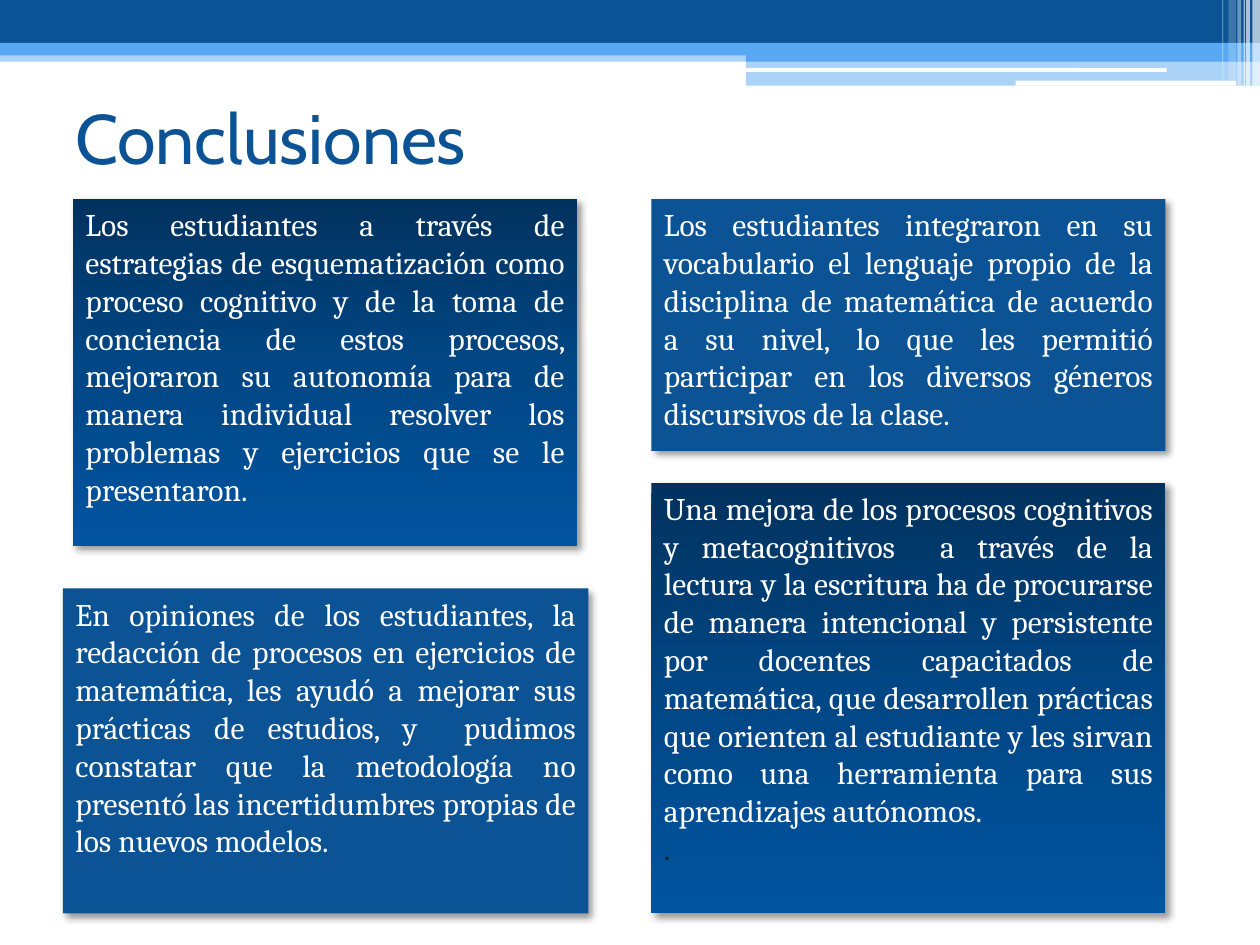
from copy import deepcopy

from lxml import etree
from pptx import Presentation
from pptx.dml.color import RGBColor
from pptx.enum import shapes, text
from pptx.oxml import ns
from pptx.util import Inches, Pt

HUES = {
    "navy": "0B5394", "sky": "59A9F2", "white": "FFFFFF", "black": "000000",
    "ink": "072428", "top": "01325E", "mid": "014786", "low": "01549F",
}
FADE = [("top", 0), ("mid", 0.5), ("low", 1)]
RECT = shapes.MSO_SHAPE.RECTANGLE
ROUND = shapes.MSO_SHAPE.ROUNDED_RECTANGLE

BANDS = [
    (0, 0.4, 10, 0.09, "sky", 50),
    (0, 0, 10, 0.34, "navy", 100),
    (0, 0.34, 10, 0.1, "sky", 100),
    (5.92, 0.39, 4.08, 0.1, "sky", 100),
    (5.92, 0.48, 4.08, 0.2, "sky", 50),
]
PILLS = [(5.91, 0.54, 3.35, 0.03), (8.06, 0.64, 1.75, 0.04)]
STRIPES = [
    (9.94, 0.06, 0.68, 65), (9.89, 0.03, 0.68, 65), (9.87, 0.01, 0.68, 60),
    (9.82, 0.03, 0.68, 40), (9.75, 0.06, 0.64, 20), (9.7, 0.01, 0.64, 30),
]
CARDS = [
    ((0.58, 1.58, 4, 2.75), True, [
        ("Los estudiantes a través de estrategias de esquematización como "
         "proceso cognitivo y de la toma de conciencia de estos procesos, "
         "mejoraron su autonomía para de manera individual resolver los "
         "problemas y ejercicios que se le presentaron.", "white")]),
    ((5.17, 1.58, 4.08, 2), False, [
        ("Los estudiantes integraron en su vocabulario el lenguaje propio de "
         "la disciplina de matemática de acuerdo a su nivel, lo que les "
         "permitió participar en los diversos géneros discursivos de la "
         "clase.", "white")]),
    ((0.5, 4.67, 4.17, 2.58), False, [
        ("En opiniones de los estudiantes, la redacción de procesos en "
         "ejercicios de matemática, les ayudó a mejorar sus prácticas de "
         "estudios, y  pudimos constatar que la metodología no presentó las "
         "incertidumbres propias de los nuevos modelos.", "white")]),
    ((5.17, 3.83, 4.08, 3.42), True, [
        ("Una mejora de los procesos cognitivos y metacognitivos  a través "
         "de la lectura y la escritura ha de procurarse de manera "
         "intencional y persistente por docentes capacitados de matemática, "
         "que desarrollen prácticas que orienten al estudiante y les sirvan "
         "como una herramienta para sus aprendizajes autónomos.", "white"),
        (".", "ink")]),
]


def color(name):
    return RGBColor.from_string(HUES[name])


def add_tag(root, name, **attrs):
    node = etree.SubElement(root, ns.qn(name))
    for key, val in attrs.items():
        node.set(key, str(val))
    return node


def add_box(slide, area, hue, alpha=100, kind=RECT):
    box = slide.shapes.add_shape(kind, *map(Inches, area))
    box.shadow.inherit = False
    box.line.fill.background()
    box.fill.solid()
    box.fill.fore_color.rgb = color(hue)
    if alpha < 100:
        paint = box.fill._xPr.find(".//" + ns.qn("a:srgbClr"))
        add_tag(paint, "a:alpha", val=alpha * 1000)
    return box


def add_fade(box):
    box.fill.gradient()
    box.fill.gradient_angle = 270
    stops = box._element.spPr.find(".//" + ns.qn("a:gsLst"))
    stops.append(deepcopy(stops[-1]))
    for stop, (hue, place) in zip(box.fill.gradient_stops, FADE):
        stop.color.rgb = color(hue)
        stop.position = place


def add_shade(box):
    root = box._element.spPr.find(ns.qn("a:effectLst"))
    shade = add_tag(root, "a:outerShdw", blurRad=Pt(4), dist=Pt(3),
                    dir=45 * 60000, algn="tl", rotWithShape=0)
    paint = add_tag(shade, "a:srgbClr", val=HUES["black"])
    add_tag(paint, "a:alpha", val=40000)


def add_run(para, words, size, face, hue):
    run = para.add_run()
    run.text = words
    run.font.size = Pt(size)
    run.font.name = face
    run.font.color.rgb = color(hue)


def add_title(slide, words):
    frame = slide.shapes.add_textbox(
        *map(Inches, (0.5, 0.5, 9, 1.17))).text_frame
    frame.word_wrap = True
    frame.vertical_anchor = text.MSO_ANCHOR.MIDDLE
    add_run(frame.paragraphs[0], words, 40, "Cabin", "navy")


def add_card(slide, area, faded, lines):
    box = add_box(slide, area, "navy")
    if faded:
        add_fade(box)
    add_shade(box)
    frame = box.text_frame
    frame.word_wrap = True
    frame.vertical_anchor = text.MSO_ANCHOR.TOP
    for num, (words, hue) in enumerate(lines):
        para = frame.add_paragraph() if num else frame.paragraphs[0]
        para.alignment = text.PP_ALIGN.JUSTIFY
        add_run(para, words, 18, "Cambria", hue)


def add_header(slide):
    for *area, hue, alpha in BANDS:
        add_box(slide, area, hue, alpha)
    for area in PILLS:
        add_box(slide, area, "white", kind=ROUND)
    for left, width, height, alpha in STRIPES:
        add_box(slide, (left, 0, width, height), "white", alpha)


def main():
    deck = Presentation()
    deck.slide_width, deck.slide_height = Inches(10), Inches(7.5)
    slide = deck.slides.add_slide(deck.slide_layouts[6])
    add_header(slide)
    add_title(slide, "Conclusiones")
    for card in CARDS:
        add_card(slide, *card)
    deck.save("out.pptx")


if __name__ == "__main__":
    main()
